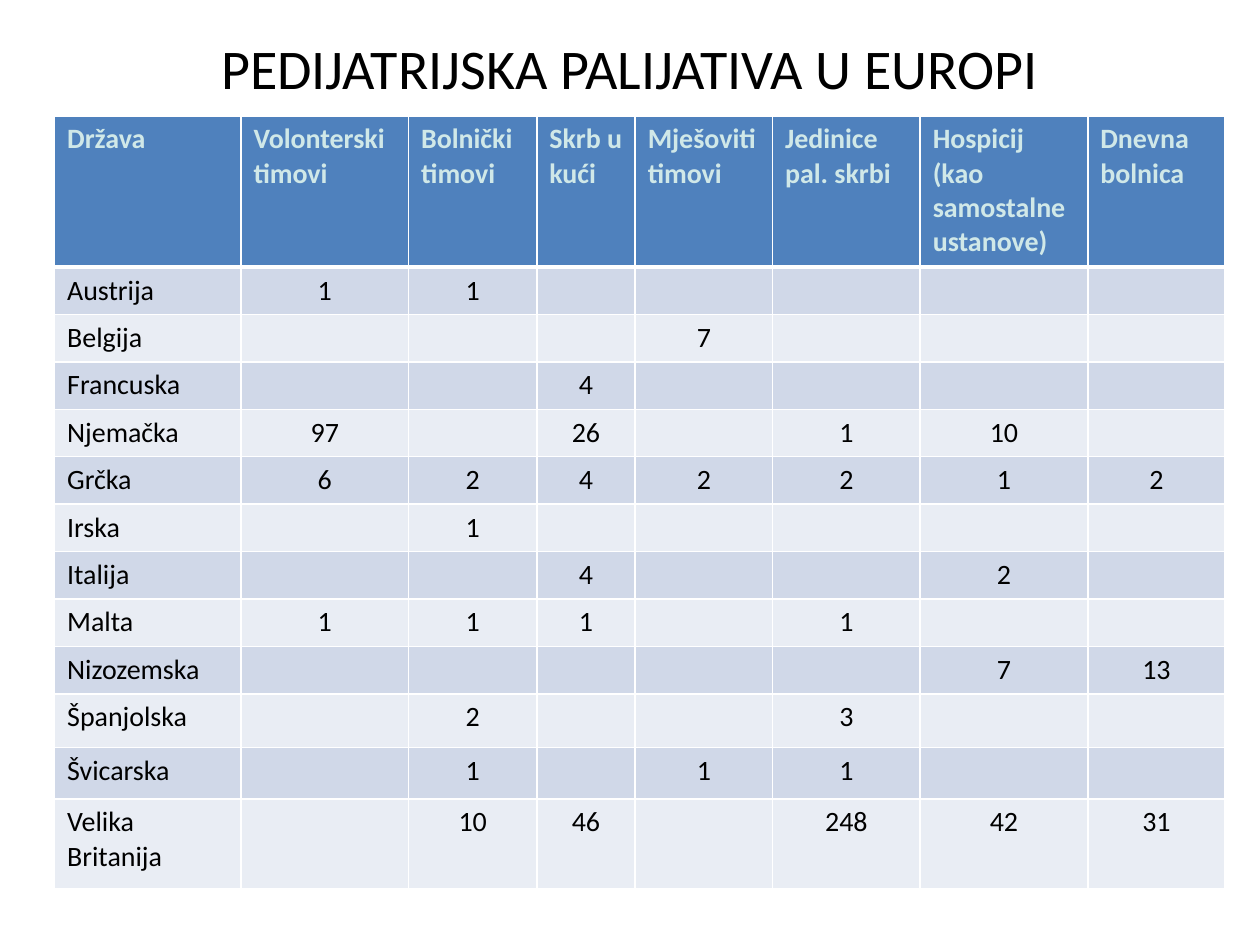
from typing import NamedTuple

from lxml import etree
from pptx import Presentation
from pptx.dml.color import RGBColor
from pptx.enum.text import MSO_ANCHOR, PP_ALIGN
from pptx.oxml.ns import qn
from pptx.util import Pt

LEFT, CENTER = PP_ALIGN.LEFT, PP_ALIGN.CENTER
MIDDLE = MSO_ANCHOR.MIDDLE
FONT = "Calibri"
BLACK, WHITE, PALE = "000000", "FFFFFF", "D0E8E8"
HEADER_FILL, BAND_FILLS = "4F81BD", ("D0D8E8", "E9EDF4")
CELL_SIZE = 16


class Column(NamedTuple):
    title: str
    width: float


class Country(NamedTuple):
    name: str
    values: tuple[int | None, ...]
    height: float = 27.1


COLUMNS = [
    Column("Država", 106.5),
    Column("Volonterski timovi", 95.8),
    Column("Bolnički timovi", 73.3),
    Column("Skrb u kući", 56.2),
    Column("Mješoviti timovi", 78.5),
    Column("Jedinice pal. skrbi", 84.4),
    Column("Hospicij (kao samostalne ustanove)", 95.8),
    Column("Dnevna bolnica", 78.5),
]
HEADER_HEIGHT = 86.4
NA = None
COUNTRIES = [
    Country("Austrija", (1, 1, NA, NA, NA, NA, NA)),
    Country("Belgija", (NA, NA, NA, 7, NA, NA, NA)),
    Country("Francuska", (NA, NA, 4, NA, NA, NA, NA)),
    Country("Njemačka", (97, NA, 26, NA, 1, 10, NA)),
    Country("Grčka", (6, 2, 4, 2, 2, 1, 2)),
    Country("Irska", (NA, 1, NA, NA, NA, NA, NA)),
    Country("Italija", (NA, NA, 4, NA, NA, 2, NA)),
    Country("Malta", (1, 1, 1, NA, 1, NA, NA)),
    Country("Nizozemska", (NA, NA, NA, NA, NA, 7, 13)),
    Country("Španjolska", (NA, 2, NA, NA, 3, NA, NA), 30.6),
    Country("Švicarska", (NA, 1, NA, 1, 1, NA, NA), 29.5),
    Country("Velika Britanija", (NA, 10, 46, NA, 248, 42, 31), 51.6),
]


def rgb(color: str) -> RGBColor:
    return RGBColor.from_string(color)


def add_run(p, text: str, size: float, color: str, bold: bool = False) -> None:
    r = p.add_run()
    r.text = text
    r.font.name, r.font.size, r.font.bold = FONT, Pt(size), bold
    r.font.color.rgb = rgb(color)


def set_borders(cell, bottom: float) -> None:
    """Draw the cell's edges; they must precede its fill in the XML."""
    tcPr = cell._tc.get_or_add_tcPr()
    edges = {"a:lnL": 1, "a:lnR": 1, "a:lnT": 1, "a:lnB": bottom}
    for i, (tag, width) in enumerate(edges.items()):
        ln = etree.Element(qn(tag), w=str(Pt(width)))
        fill = etree.SubElement(ln, qn("a:solidFill"))
        etree.SubElement(fill, qn("a:srgbClr"), val=WHITE)
        tcPr.insert(i, ln)


def fill_cell(cell, text: str, fill: str, color: str = BLACK,
              bold: bool = False, align=LEFT, bottom: float = 1) -> None:
    cell.fill.solid()
    cell.fill.fore_color.rgb = rgb(fill)
    set_borders(cell, bottom)
    p = cell.text_frame.paragraphs[0]
    p.alignment = align
    if text:
        add_run(p, text, CELL_SIZE, color, bold)
    else:
        # Keeps an empty cell from stretching its row
        p._p.get_or_add_endParaRPr().set("sz", str(CELL_SIZE * 100))


def add_title(s, text: str) -> None:
    tf = s.shapes.add_textbox(Pt(36), Pt(21.6), Pt(648), Pt(33)).text_frame
    tf.word_wrap, tf.vertical_anchor = True, MIDDLE
    p = tf.paragraphs[0]
    p.alignment = CENTER
    add_run(p, text, 32, BLACK)


def add_care_table(s) -> None:
    heights = [HEADER_HEIGHT] + [c.height for c in COUNTRIES]
    table = s.shapes.add_table(
        len(heights), len(COLUMNS), Pt(31.2), Pt(66.2),
        Pt(sum(c.width for c in COLUMNS)), Pt(sum(heights))).table
    table.first_row = table.horz_banding = False
    for row, height in zip(table.rows, heights):
        row.height = Pt(height)

    # Header row
    for i, column in enumerate(COLUMNS):
        table.columns[i].width = Pt(column.width)
        fill_cell(table.cell(0, i), column.title, HEADER_FILL, PALE,
                  bold=True, bottom=3)

    # Country rows
    for i, country in enumerate(COUNTRIES):
        fill = BAND_FILLS[i % 2]
        fill_cell(table.cell(i + 1, 0), country.name, fill)
        for j, value in enumerate(country.values, 1):
            text = "" if value is NA else str(value)
            fill_cell(table.cell(i + 1, j), text, fill, align=CENTER)


def main() -> None:
    prs = Presentation()
    prs.slide_width, prs.slide_height = Pt(720), Pt(540)
    s = prs.slides.add_slide(prs.slide_layouts[6])
    s.background.fill.solid()
    s.background.fill.fore_color.rgb = rgb(WHITE)
    add_care_table(s)
    add_title(s, "PEDIJATRIJSKA PALIJATIVA U EUROPI")
    prs.save("out.pptx")


if __name__ == "__main__":
    main()
